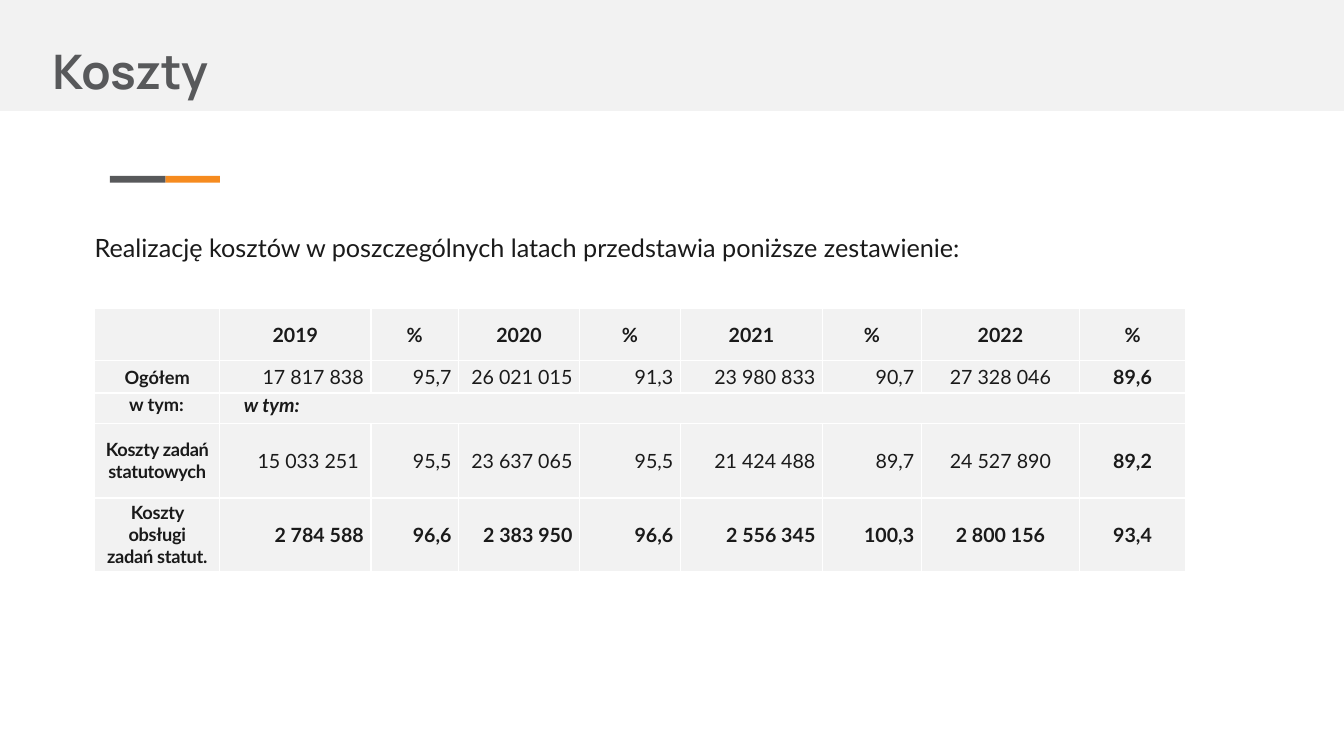
"""Build the slide on yearly costs with its comparison table."""
from dataclasses import dataclass

from lxml import etree
from pptx import Presentation
from pptx import util as u
from pptx.dml.color import RGBColor
from pptx.enum import shapes, text
from pptx.oxml import ns

COLOURS = {"band": "F2F2F2", "grey": "58595B", "orange": "F68B1F",
           "ink": "1A1A1A", "white": "FFFFFF"}
SLIDE_WIDTH, SLIDE_HEIGHT = u.Inches(13.33), u.Inches(7.5)
ALIGN = text.PP_ALIGN
COLUMN_SHARES = (9.3, 11.25, 6.53, 9, 7.5, 10.58, 7.35, 11.78, 7.88)
INSET = 0.07


@dataclass
class Area:
    """Position and size in percent of the slide."""
    left: float
    top: float
    width: float
    height: float

    def box(self) -> tuple[int, int, int, int]:
        return (across(self.left), down(self.top), across(self.width), down(self.height))


@dataclass
class Bar:
    area: Area
    colour: str


@dataclass
class CostRow:
    share: float
    label: str
    values: tuple[str, ...]
    bold: bool = False
    spacing: float = 0


BAND = Bar(Area(0, 0, 100, 14.67), "band")
ACCENTS = (Bar(Area(12.31, 23.25, 4.05, 0.93), "orange"),
           Bar(Area(8.18, 23.25, 4.13, 0.93), "grey"))
TITLE_AREA = Area(3.15, 0, 84.1, 14.93)
LEAD_AREA = Area(6.3, 30.13, 84.32, 5.33)
TABLE_AREA = Area(7.05, 40.8, sum(COLUMN_SHARES), 34.8)
SUBHEAD_ROW = 2
COSTS = (
    CostRow(6.93, "", ("2019", "%", "2020", "%", "2021", "%", "2022", "%"), bold=True),
    CostRow(4.27, "Ogółem", ("17 817 838", "95,7", "26 021 015", "91,3",
                             "23 980 833", "90,7", "27 328 046", "89,6")),
    CostRow(4, "w tym:", ("w tym:",) + ("",) * 7, bold=True),
    CostRow(9.87, "Koszty zadań statutowych",
            ("15 033 251", "95,5", "23 637 065", "95,5",
             "21 424 488", "89,7", "24 527 890", "89,2"), spacing=-0.2),
    CostRow(9.73, "Koszty obsługi\nzadań statut.",
            ("2 784 588", "96,6", "2 383 950", "96,6",
             "2 556 345", "100,3", "2 800 156", "93,4"), bold=True, spacing=-0.2),
)


def across(share: float) -> int:
    return round(SLIDE_WIDTH * share / 100)


def down(share: float) -> int:
    return round(SLIDE_HEIGHT * share / 100)


def colour(name: str) -> RGBColor:
    return RGBColor.from_string(COLOURS[name])


def write(paragraph, wording: str, size: float, family: str = "Lato", ink: str = "ink",
          bold: bool = False, italic: bool = False, spacing: float = 0) -> None:
    for number, line in enumerate(wording.split("\n")):
        if number:
            paragraph.add_line_break()
        run = paragraph.add_run()
        run.text = line
        font = run.font
        font.name, font.size, font.bold, font.italic = family, u.Pt(size), bold, italic
        font.color.rgb = colour(ink)
        if spacing:
            run._r.get_or_add_rPr().set("spc", str(round(spacing * 100)))


def draw_bar(slide, bar: Bar):
    strip = slide.shapes.add_shape(shapes.MSO_SHAPE.RECTANGLE, *bar.area.box())
    strip.shadow.inherit = False
    strip.fill.solid()
    strip.fill.fore_color.rgb = colour(bar.colour)
    strip.line.fill.background()
    return strip


def draw_title(slide) -> None:
    title = slide.shapes.title
    title.left, title.top, title.width, title.height = TITLE_AREA.box()
    frame = title.text_frame
    frame.auto_size = text.MSO_AUTO_SIZE.NONE
    frame.vertical_anchor = text.MSO_ANCHOR.MIDDLE
    frame.margin_left = frame.margin_right = u.Inches(0.1)
    frame.margin_top = frame.margin_bottom = u.Inches(0.1)
    heading = frame.paragraphs[0]
    heading.alignment, heading.line_spacing = ALIGN.LEFT, 1.5
    write(heading, "Koszty", 34, "Manrope", "grey", bold=True)
    title.element.addprevious(draw_bar(slide, BAND).element)


def draw_lead(slide) -> None:
    frame = slide.shapes.add_textbox(*LEAD_AREA.box()).text_frame
    frame.word_wrap = True
    frame.auto_size = text.MSO_AUTO_SIZE.SHAPE_TO_FIT_TEXT
    write(frame.paragraphs[0],
          "Realizację kosztów w poszczególnych latach przedstawia poniższe zestawienie:", 18)


def dress(cell) -> None:
    properties = cell._tc.get_or_add_tcPr()
    for side in ("a:lnL", "a:lnR", "a:lnT", "a:lnB"):
        edge = etree.SubElement(properties, ns.qn(side), w=str(u.Pt(1)))
        fill = etree.SubElement(edge, ns.qn("a:solidFill"))
        etree.SubElement(fill, ns.qn("a:srgbClr"), val=COLOURS["white"])
    cell.fill.solid()
    cell.fill.fore_color.rgb = colour("band")
    cell.margin_left = cell.margin_right = u.Inches(INSET)
    cell.margin_top = cell.margin_bottom = 0


def alignment_at(row: int, column: int):
    if row == SUBHEAD_ROW:
        return ALIGN.JUSTIFY if column else ALIGN.LEFT
    return ALIGN.CENTER if row == 0 or column in (0, 7, 8) else ALIGN.RIGHT


def draw_costs(slide) -> None:
    table = slide.shapes.add_table(len(COSTS), len(COLUMN_SHARES), *TABLE_AREA.box()).table
    table.first_row = table.horz_banding = False
    for column, share in zip(table.columns, COLUMN_SHARES):
        column.width = across(share)
    for y, cost in enumerate(COSTS):
        table.rows[y].height = down(cost.share)
        for x, wording in enumerate((cost.label, *cost.values)):
            cell = table.cell(y, x)
            dress(cell)
            if not wording:
                continue
            if y != SUBHEAD_ROW:
                cell.vertical_anchor = text.MSO_ANCHOR.MIDDLE
            paragraph = cell.text_frame.paragraphs[0]
            paragraph.alignment = alignment_at(y, x)
            paragraph.space_before = paragraph.space_after = u.Pt(2)
            write(paragraph, wording, 14 if x else 13, bold=cost.bold or x in (0, 8),
                  italic=y == SUBHEAD_ROW and x == 1, spacing=0 if x else cost.spacing)
    table.cell(SUBHEAD_ROW, 1).merge(table.cell(SUBHEAD_ROW, 8))
    table.cell(SUBHEAD_ROW, 0).margin_left = u.Inches(0.34)
    table.cell(SUBHEAD_ROW, 1).margin_left = u.Inches(0.24)
    table.cell(3, 1).margin_right = u.Inches(0.12)


def main() -> None:
    deck = Presentation()
    deck.slide_width, deck.slide_height = SLIDE_WIDTH, SLIDE_HEIGHT
    slide = deck.slides.add_slide(deck.slide_layouts[5])
    draw_title(slide)
    for accent in ACCENTS:
        draw_bar(slide, accent)
    draw_lead(slide)
    draw_costs(slide)
    deck.save("out.pptx")


if __name__ == "__main__":
    main()
